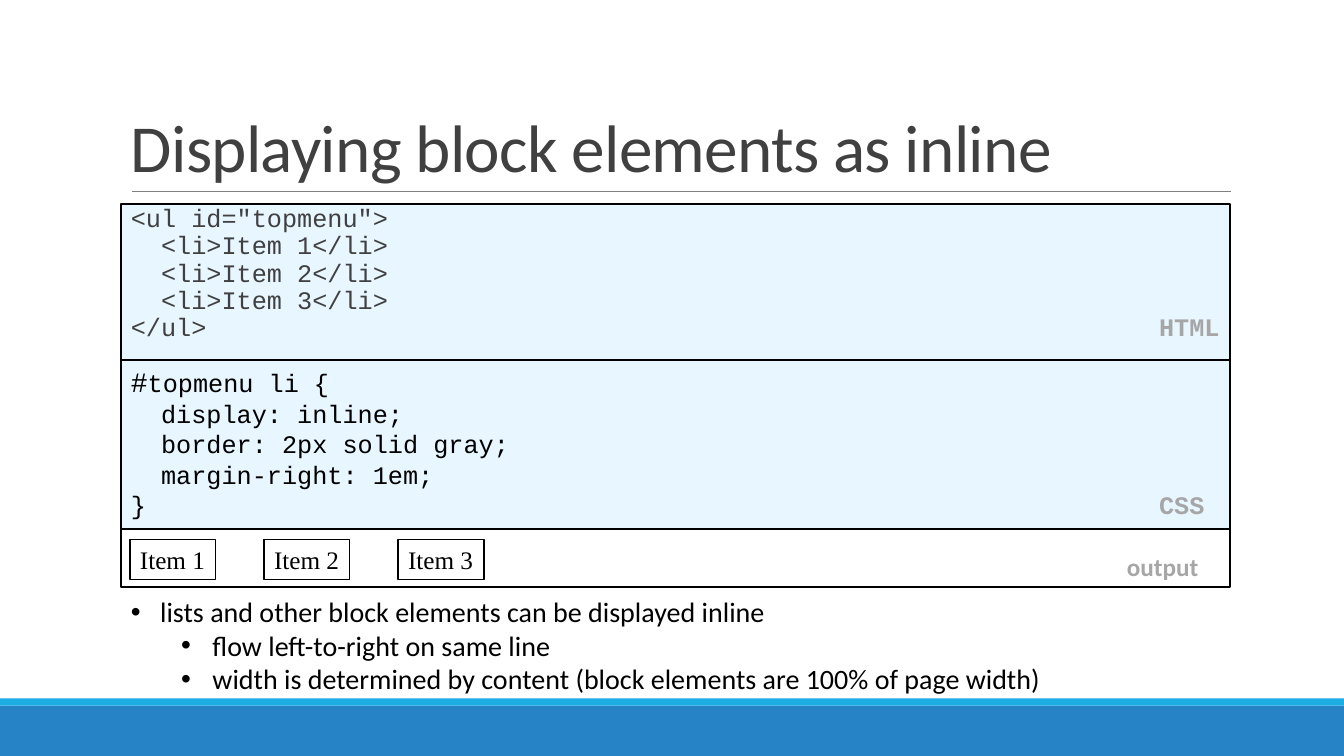
from pptx import Presentation
from pptx.dml.color import RGBColor
from pptx.enum.shapes import MSO_CONNECTOR as Conn, MSO_SHAPE as Shape
from pptx.enum.text import MSO_ANCHOR as Anchor, PP_ALIGN as Align
from pptx.oxml.ns import qn
from pptx.util import Inches, Pt
from lxml.etree import SubElement as Sub

UNIT = Inches(0.1)
WIDE, HIGH = 133.33, 75
LEFT, SPAN = 12, 110
BLACK = RGBColor(0, 0, 0)
DARK = RGBColor(0x40, 0x40, 0x40)
GRAY = RGBColor(0x80, 0x80, 0x80)
PALE = RGBColor(0xA6, 0xA6, 0xA6)
ICE = RGBColor(0xE7, 0xF6, 0xFF)
BLUE = RGBColor(0x26, 0x83, 0xC6)
CYAN = RGBColor(0x1C, 0xAD, 0xE4)

CODE = dict(name="Courier New", size=Pt(18))
TAG = dict(bold=True)
BODY = dict(name="Calibri", size=Pt(20))
HTML = [(0, '<ul id="topmenu">'), (1, "<li>Item 1</li>"), (1, "<li>Item 2</li>"),
        (1, "<li>Item 3</li>"), (0, "</ul>")]
CSS = [(0, "topmenu li {"), (1, "display: inline;"), (1, "border: 2px solid gray;"),
       (1, "margin-right: 1em;"), (0, "}")]
NOTES = [(0, "lists and other block elements can be displayed inline"),
         (1, "flow left-to-right on same line"),
         (1, "width is determined by content (block elements are 100% of page width)")]


def grid(*cells):
    """Turn grid cells into lengths."""
    return [round(cell * UNIT) for cell in cells]


def apply(item, style):
    """Set each format value on an item."""
    for key, value in style.items():
        setattr(item, key, value)


def write(para, text, color, style):
    """Add a styled run to a paragraph."""
    run = para.add_run()
    run.text = text
    apply(run.font, style)
    run.font.color.rgb = color
    return run


def rows(frame, count):
    """Yield left-aligned paragraphs of a frame."""
    for num in range(count):
        para = frame.add_paragraph() if num else frame.paragraphs[0]
        para.alignment = Align.LEFT
        yield para


def rect(slide, cells, fill=None, line=None):
    """Draw a flat rectangle and return its text frame."""
    box = slide.shapes.add_shape(Shape.RECTANGLE, *grid(*cells))
    box.shadow.inherit = False
    if fill is None:
        box.fill.background()
    else:
        box.fill.solid()
        box.fill.fore_color.rgb = fill
    if line is None:
        box.line.fill.background()
    else:
        apply(box.line, dict(width=Pt(line)))
        box.line.color.rgb = BLACK
    apply(box.text_frame, dict(word_wrap=True, vertical_anchor=Anchor.TOP))
    return box.text_frame


def area(slide, cells, style):
    """Add a wrapping text box."""
    frame = slide.shapes.add_textbox(*grid(*cells)).text_frame
    apply(frame, dict(word_wrap=True, **style))
    return frame


def rule(slide, left, right, top):
    """Draw the thin line under the title."""
    line = slide.shapes.add_connector(Conn.STRAIGHT, *grid(left, top, right, top))
    line.line.width = Pt(0.5)
    line.line.color.rgb = GRAY
    Sub(line._element.spPr, qn("a:effectLst"))


def panel(slide, cells, lines, tag, color, space, lead=""):
    """Draw a code panel with a language tag on its last line."""
    frame = rect(slide, cells, ICE, 1.5)
    for para, (level, text) in zip(rows(frame, len(lines)), lines):
        apply(para, space)
        props = para._p.get_or_add_pPr()
        props.set("marL", str(Inches(0.3 * level)))
        if lead and para._p is frame.paragraphs[0]._p:
            write(para, lead, color, CODE | dict(size=Pt(20)))
        write(para, text, color, CODE)
    stops = Sub(props, qn("a:tabLst"))
    Sub(stops, qn("a:tab"), pos=str(Inches(10.2)), algn="l")
    write(para, "\t" + tag, PALE, CODE | TAG)


def notes(slide, cells):
    """Write the bulleted notes."""
    frame = area(slide, cells, {})
    for para, (level, text) in zip(rows(frame, len(NOTES)), NOTES):
        margin, hang = [(0.29, 0.29), (0.81, 0.31)][level]
        para.level = level
        props = para._p.get_or_add_pPr()
        props.set("marL", str(Inches(margin)))
        props.set("indent", str(-Inches(hang)))
        Sub(props, qn("a:buFont"), typeface="Arial")
        Sub(props, qn("a:buChar"), char="•")
        write(para, text, BLACK, BODY)


def output(slide, top):
    """Draw the output strip with its inline items."""
    for num in range(3):
        frame = rect(slide, (12.9 + 13.3 * num, top + 1, 8.5, 4), line=1)
        frame.word_wrap = False
        para, = rows(frame, 1)
        write(para, f"Item {num + 1}", BLACK, dict(name="Times New Roman", size=Pt(18)))
    frame = rect(slide, (LEFT, top, SPAN, 5.7), line=1.5)
    apply(frame, dict(vertical_anchor=Anchor.BOTTOM, margin_right=Inches(0.31)))
    para = frame.paragraphs[0]
    para.alignment = Align.RIGHT
    write(para, "output", PALE, BODY | TAG | dict(size=Pt(18)))


def main():
    """Build the slide and save it."""
    deck = Presentation()
    apply(deck, dict(zip(("slide_width", "slide_height"), grid(WIDE, HIGH))))
    slide = deck.slides.add_slide(deck.slide_layouts[6])
    rect(slide, (0, 70, WIDE, 5), BLUE)
    rect(slide, (0, 69.3, WIDE, 0.7), CYAN)
    rule(slide, 13.1, 122.1, 19)
    frame = area(slide, (LEFT, 3.1, SPAN, 15.9), dict(vertical_anchor=Anchor.BOTTOM))
    para, = rows(frame, 1)
    para.line_spacing = 0.85
    run = write(para, "Displaying block elements as inline", DARK, BODY | dict(size=Pt(48)))
    run.font._element.set("spc", "-50")
    tight = dict(line_spacing=0.8, space_after=Pt(2))
    panel(slide, (LEFT, 20.2, SPAN, 15.5), HTML, "HTML", DARK, tight)
    panel(slide, (LEFT, 35.7, SPAN, 16.8), CSS, "CSS", BLACK, {}, "#")
    notes(slide, (LEFT, 58.5, SPAN, 11.1))
    output(slide, 52.5)
    deck.save("out.pptx")


if __name__ == "__main__":
    main()
